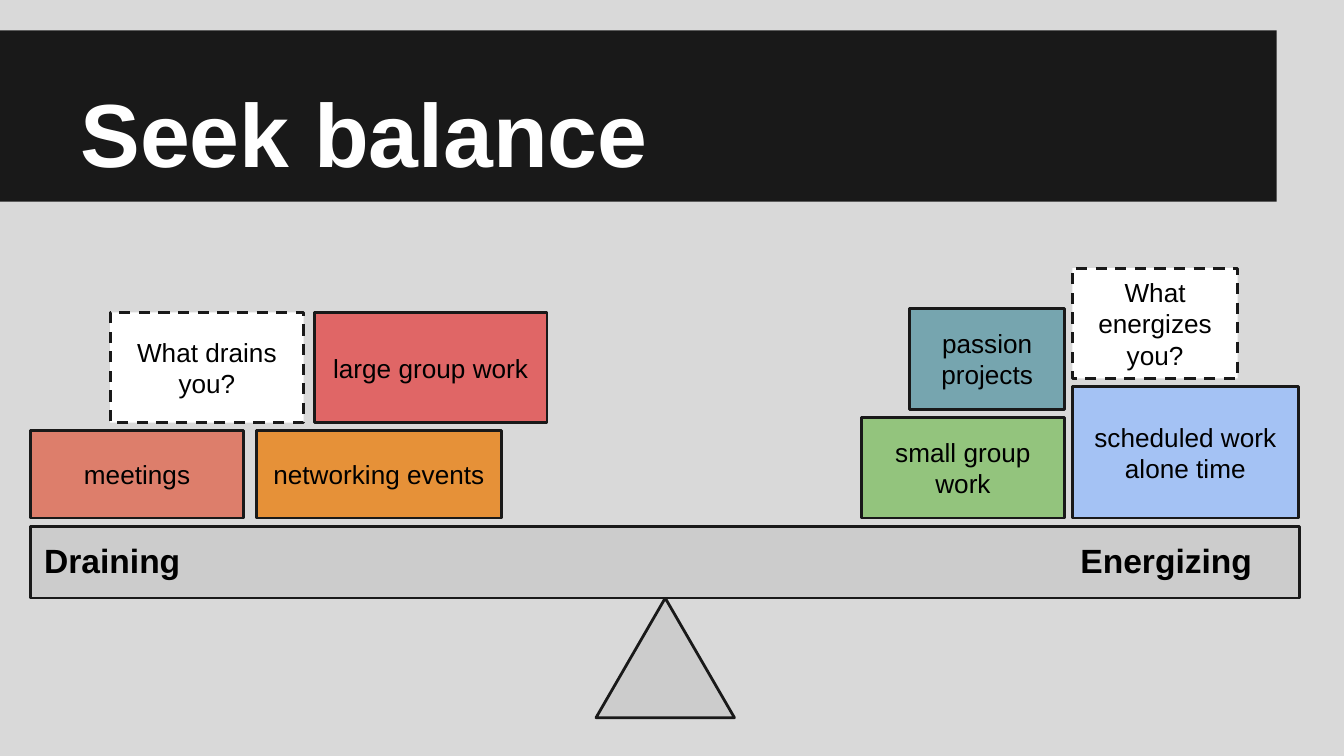
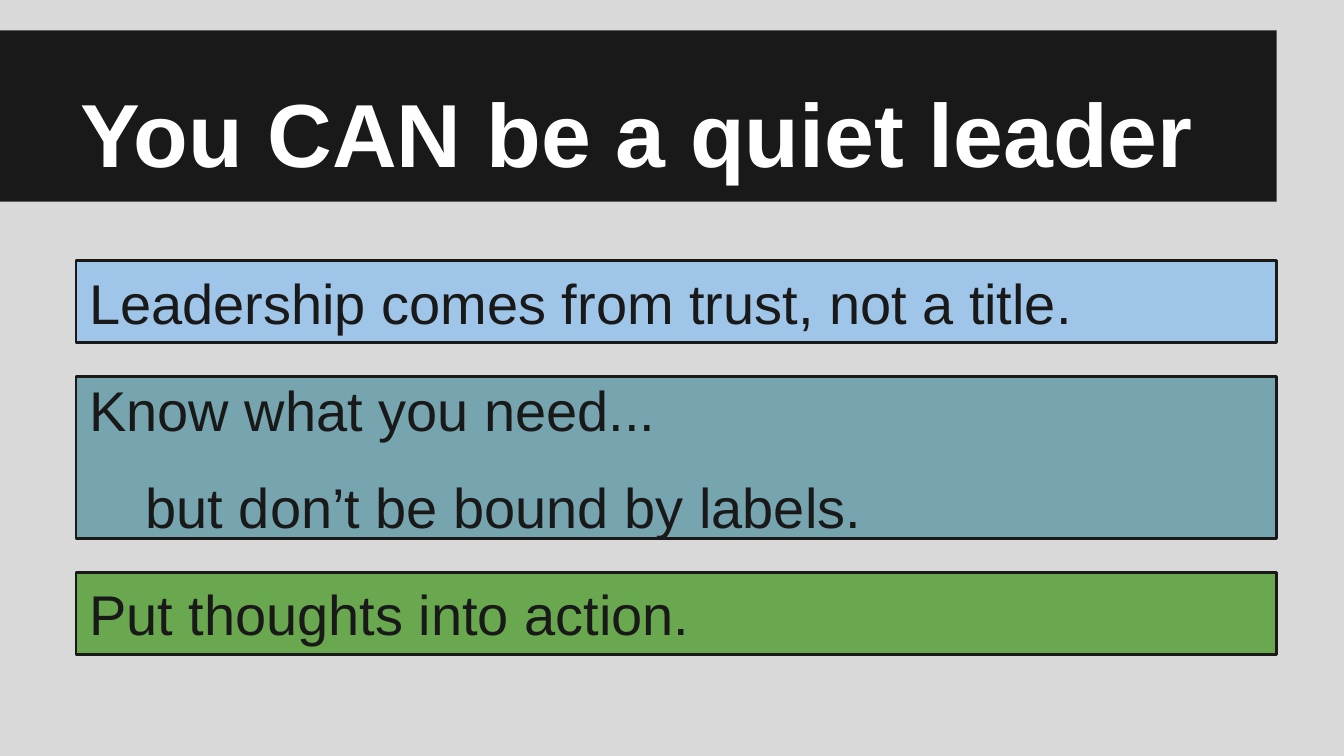
import dataclasses

import pptx
import pptx.dml.color
import pptx.enum.dml
import pptx.enum.shapes
import pptx.enum.text
import pptx.util

COLUMNS, ROWS = 100, 56.25
CELL = pptx.util.Inches(0.1)
SHAPE = pptx.enum.shapes.MSO_SHAPE
ANCHOR = pptx.enum.text.MSO_ANCHOR
ALIGN = pptx.enum.text.PP_ALIGN


@dataclasses.dataclass(frozen=True)
class Theme:
    """Colours, font and type sizes shared by the slides."""
    paper: str = "D9D9D9"
    ink: str = "191919"
    black: str = "000000"
    white: str = "FFFFFF"
    beam: str = "CCCCCC"
    coral: str = "DD7E6B"
    red: str = "E06666"
    orange: str = "E69138"
    teal: str = "76A5AF"
    light_green: str = "93C47D"
    green: str = "6AA84F"
    periwinkle: str = "A4C2F4"
    sky: str = "9FC5E8"
    font: str = "Arial"
    title_size: int = 48
    message_size: int = 30
    side_size: int = 18
    block_size: int = 14
    outline: float = 1.5


THEME = Theme()


def rgb(colour):
    """Turn a hex string into a colour."""
    return pptx.dml.color.RGBColor.from_string(colour)


def grid(*cells):
    """Turn columns and rows of the grid into lengths."""
    return [round(cell * CELL) for cell in cells]


def add_box(shapes, area, fill, kind=SHAPE.RECTANGLE, outlined=True, dashed=False):
    """Add a filled shape, outlined in ink unless told otherwise."""
    box = shapes.add_shape(kind, *grid(*area))
    box.shadow.inherit = False
    box.fill.solid()
    box.fill.fore_color.rgb = rgb(fill)
    if outlined:
        box.line.color.rgb = rgb(THEME.ink)
        box.line.width = pptx.util.Pt(THEME.outline)
    else:
        box.line.fill.background()
    if dashed:
        box.line.dash_style = pptx.enum.dml.MSO_LINE.DASH
    return box


def write(box, lines, size, colour, bold=False, anchor=ANCHOR.MIDDLE, align=ALIGN.LEFT):
    """Write one paragraph per line and return the paragraphs."""
    frame = box.text_frame
    frame.word_wrap = True
    frame.vertical_anchor = anchor
    frame.margin_left = frame.margin_right = CELL
    frame.margin_top = frame.margin_bottom = CELL
    frame.text = "\n".join(lines)
    for paragraph in frame.paragraphs:
        paragraph.alignment = align
        paragraph.font.name = THEME.font
        paragraph.font.size = pptx.util.Pt(size)
        paragraph.font.bold = bold
        paragraph.font.color.rgb = rgb(colour)
    return frame.paragraphs


def add_titled_slide(deck, title):
    """Add a blank slide with the dark title band."""
    slide = deck.slides.add_slide(deck.slide_layouts[6])
    add_box(slide.shapes, (0, 2.25, 95, 12.75), THEME.ink, outlined=False)
    heading = slide.shapes.add_textbox(*grid(5, 2.3, 90, 12.5))
    write(heading, [title], THEME.title_size, THEME.white, bold=True, anchor=ANCHOR.BOTTOM)
    return slide


def add_scale(slide, left, top, width, height):
    """Add the beam on its pivot, with a name at each end."""
    scale = slide.shapes.add_group_shape().shapes
    pivot_width = 10.3
    pivot_left = left + (width - pivot_width) / 2
    add_box(scale, (pivot_left, top + height, pivot_width, 8.9), THEME.beam,
            SHAPE.ISOSCELES_TRIANGLE)
    add_box(scale, (left, top, width, height), THEME.beam)
    for side, side_left, side_width in (("Draining", left, 26.9), ("Energizing", 79.4, 18.2)):
        name = scale.add_textbox(*grid(side_left, top, side_width, 4.2))
        write(name, [side], THEME.side_size, THEME.black, bold=True, anchor=ANCHOR.TOP)


def add_stack(slide, base, blocks, gap=0.6):
    """Pile labelled blocks upwards from a base row; white ones are dashed."""
    for label, left, width, height, fill in blocks:
        block = add_box(slide.shapes, (left, base - height, width, height), fill,
                        dashed=fill == THEME.white)
        write(block, [label], THEME.block_size, THEME.black, align=ALIGN.CENTER)
        base -= height + gap


def add_messages(slide, messages, top, gap=2.5):
    """Stack full-width message bars with equal gaps, indenting follow-up lines."""
    for lines, height, fill in messages:
        bar = add_box(slide.shapes, (5.65, top, 89.35, height), fill)
        paragraphs = write(bar, lines, THEME.message_size, THEME.ink)
        if len(lines) > 1:
            for paragraph in paragraphs:
                paragraph.space_before = pptx.util.Pt(6)
                paragraph.space_after = pptx.util.Pt(10)
        for follow_up in paragraphs[1:]:
            properties = follow_up._p.get_or_add_pPr()
            properties.set("marL", str(round(5 * CELL)))
            properties.set("indent", str(round(-0.8 * CELL)))
        top += height + gap


def build_balance(deck):
    """Build the slide that weighs draining against energizing work."""
    slide = add_titled_slide(deck, "Seek balance")
    add_scale(slide, 2.3, 39.2, 94.4, 5.3)
    stacks = (
        (("meetings", 2.3, 15.8, 6.5, THEME.coral),
         ("What drains you?", 8.2, 14.4, 8.2, THEME.white)),
        (("networking events", 19.1, 18.2, 6.5, THEME.orange),
         ("large group work", 23.4, 17.3, 8.2, THEME.red)),
        (("small group work", 64.1, 15.1, 7.5, THEME.light_green),
         ("passion projects", 67.7, 11.5, 7.5, THEME.teal)),
        (("scheduled work alone time", 79.8, 16.8, 9.8, THEME.periwinkle),
         ("What energizes you?", 79.8, 12.3, 8.2, THEME.white)),
    )
    for blocks in stacks:
        add_stack(slide, 38.55, blocks)


def build_leader(deck):
    """Build the slide with the closing messages."""
    slide = add_titled_slide(deck, "You CAN be a quiet leader")
    add_messages(slide, (
        (["Leadership comes from trust, not a title."], 6.1, THEME.sky),
        (["Know what you need...", "but don’t be bound by labels."], 12.1, THEME.teal),
        (["Put thoughts into action."], 6.1, THEME.green),
    ), top=19.4)


def main():
    """Build and save the deck."""
    deck = pptx.Presentation()
    deck.slide_width, deck.slide_height = grid(COLUMNS, ROWS)
    backdrop = deck.slide_master.background.fill
    backdrop.solid()
    backdrop.fore_color.rgb = rgb(THEME.paper)
    build_balance(deck)
    build_leader(deck)
    deck.save("out.pptx")


if __name__ == "__main__":
    main()
